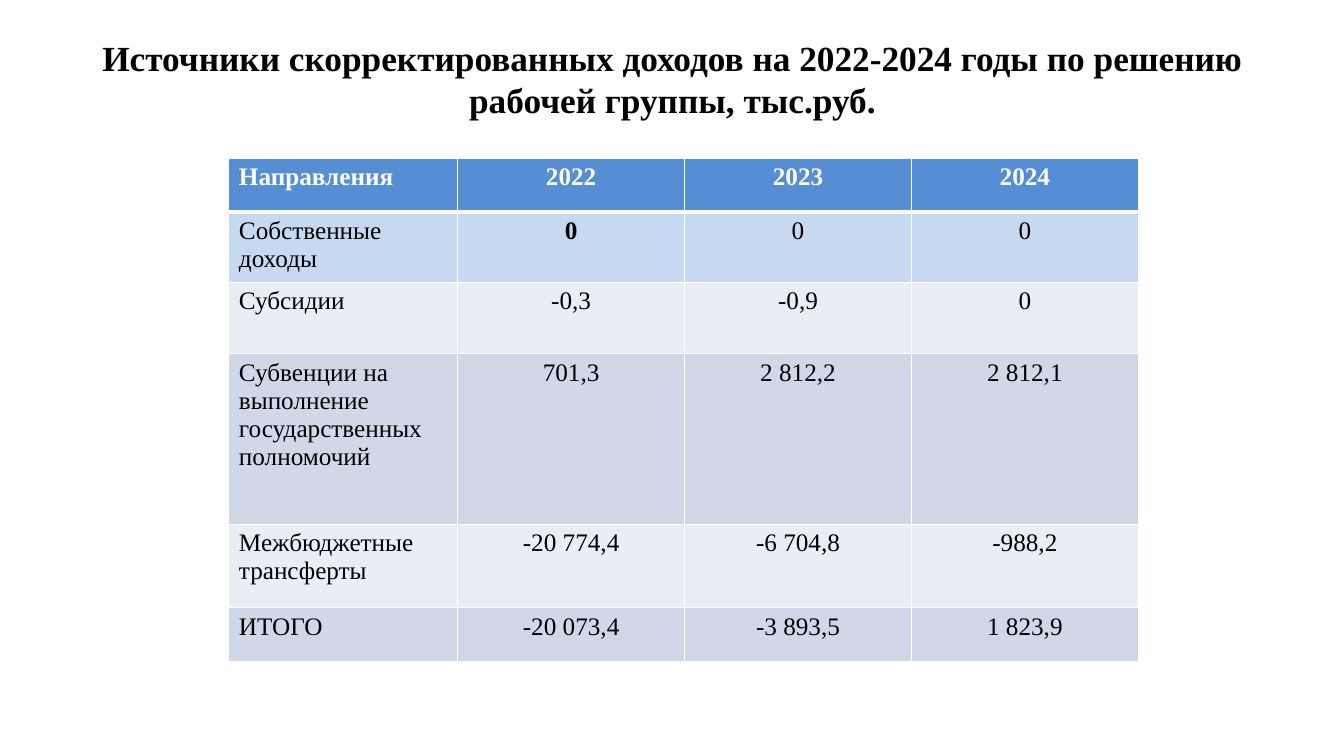
from dataclasses import dataclass

import lxml.etree
import pptx
import pptx.dml.color
import pptx.enum.text
import pptx.oxml.ns
import pptx.table
import pptx.text.text
import pptx.util

Inches = pptx.util.Inches
Align = pptx.enum.text.PP_ALIGN


@dataclass(frozen=True)
class Theme:
    font: str = "Times New Roman"
    title_size: float = 25.2
    table_size: float = 18
    dark_text: str = "000000"
    light_text: str = "FFFFFF"
    border: str = "FFFFFF"
    header: str = "558ED5"
    own_income: str = "C6D9F1"
    light_band: str = "E9EDF4"
    dark_band: str = "D0D8E8"


@dataclass(frozen=True)
class IncomeRow:
    source: str
    amounts: tuple[str, str, str]
    height: float
    fill: str
    bold_columns: tuple[int, ...] = ()
    text_color: str = "000000"
    top_border: float = 1
    bottom_border: float = 1


THEME = Theme()
COLUMN_WIDTHS = (2.27, 2.25, 2.25, 2.25)
INCOME_ROWS = (
    IncomeRow("Направления", ("2022", "2023", "2024"), 0.53, THEME.header,
              bold_columns=(0, 1, 2, 3), text_color=THEME.light_text, bottom_border=3),
    IncomeRow("Собственные доходы", ("0", "0", "0"), 0.53, THEME.own_income,
              bold_columns=(1,), top_border=3),
    IncomeRow("Субсидии", ("-0,3", "-0,9", "0"), 0.71, THEME.light_band),
    IncomeRow("Субвенции на выполнение государственных полномочий",
              ("701,3", "2 812,2", "2 812,1"), 1.69, THEME.dark_band),
    IncomeRow("Межбюджетные трансферты", ("-20 774,4", "-6 704,8", "-988,2"),
              0.83, THEME.light_band),
    IncomeRow("ИТОГО", ("-20 073,4", "-3 893,5", "1 823,9"), 0.53, THEME.dark_band),
)


def write_text(frame: pptx.text.text.TextFrame, text: str, *, size: float,
               color: str = THEME.dark_text, bold: bool = False,
               align: Align = Align.CENTER) -> None:
    paragraph = frame.paragraphs[0]
    paragraph.alignment = align
    run = paragraph.add_run()
    run.text = text
    run.font.name = THEME.font
    run.font.size = pptx.util.Pt(size)
    run.font.bold = bold
    run.font.color.rgb = pptx.dml.color.RGBColor.from_string(color)


def set_borders(cell: pptx.table._Cell, top: float, bottom: float) -> None:
    """Draw all four cell borders; must run before the cell is filled."""
    qn = pptx.oxml.ns.qn
    properties = cell._tc.get_or_add_tcPr()
    for side, width in (("L", 1), ("R", 1), ("T", top), ("B", bottom)):
        line = lxml.etree.SubElement(properties, qn(f"a:ln{side}"),
                                     w=str(pptx.util.Pt(width)))
        solid = lxml.etree.SubElement(line, qn("a:solidFill"))
        lxml.etree.SubElement(solid, qn("a:srgbClr"), val=THEME.border)


def fill_row(table: pptx.table.Table, index: int, row: IncomeRow) -> None:
    table.rows[index].height = Inches(row.height)
    for column, text in enumerate((row.source, *row.amounts)):
        cell = table.cell(index, column)
        set_borders(cell, row.top_border, row.bottom_border)
        cell.fill.solid()
        cell.fill.fore_color.rgb = pptx.dml.color.RGBColor.from_string(row.fill)
        write_text(cell.text_frame, text, size=THEME.table_size, color=row.text_color,
                   bold=column in row.bold_columns,
                   align=Align.CENTER if column else Align.LEFT)


def main() -> None:
    presentation = pptx.Presentation()
    presentation.slide_width = Inches(13.33)
    presentation.slide_height = Inches(7.5)
    slide = presentation.slides.add_slide(presentation.slide_layouts[6])

    title = slide.shapes.add_textbox(
        Inches(0.67), Inches(0.3), Inches(12), Inches(0.95)).text_frame
    title.word_wrap = True
    title.vertical_anchor = pptx.enum.text.MSO_ANCHOR.MIDDLE
    write_text(title, "Источники скорректированных доходов на 2022-2024 годы "
               "по решению рабочей группы, тыс.руб.",
               size=THEME.title_size, bold=True)

    income_table = slide.shapes.add_table(
        len(INCOME_ROWS), len(COLUMN_WIDTHS), Inches(2.27), Inches(1.57),
        Inches(sum(COLUMN_WIDTHS)), Inches(sum(row.height for row in INCOME_ROWS))).table
    for column, width in zip(income_table.columns, COLUMN_WIDTHS):
        column.width = Inches(width)
    for index, row in enumerate(INCOME_ROWS):
        fill_row(income_table, index, row)

    presentation.save("out.pptx")


if __name__ == "__main__":
    main()
